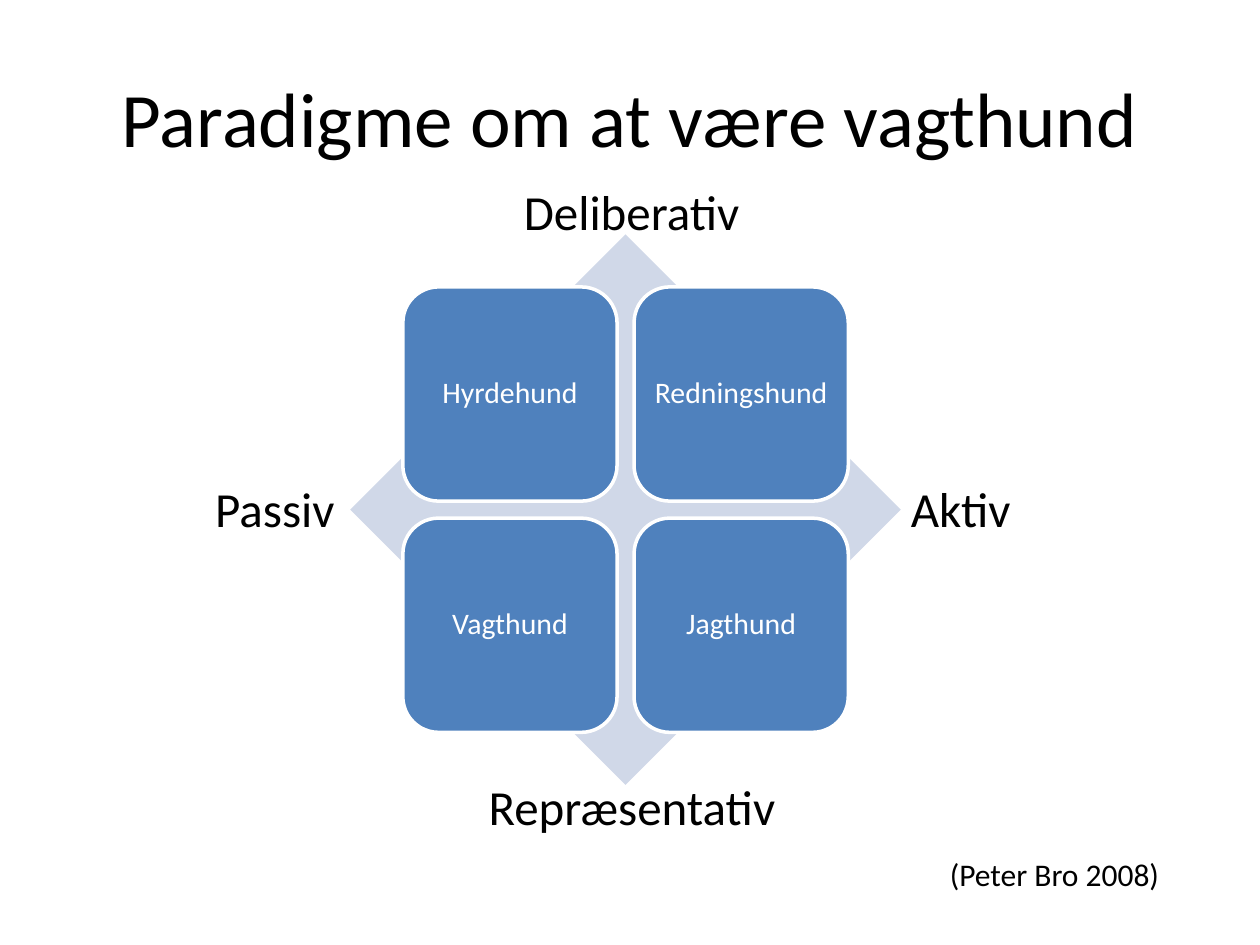
from dataclasses import dataclass

from pptx import Presentation
from pptx.dml.color import RGBColor
from pptx.enum.shapes import MSO_SHAPE
from pptx.enum.text import MSO_ANCHOR, PP_ALIGN
from pptx.util import Inches, Pt

DIAMOND, ROUNDED = MSO_SHAPE.DIAMOND, MSO_SHAPE.ROUNDED_RECTANGLE
LEFT, CENTER = PP_ALIGN.LEFT, PP_ALIGN.CENTER
TOP, MIDDLE = MSO_ANCHOR.TOP, MSO_ANCHOR.MIDDLE


@dataclass(frozen=True)
class Theme:
    font: str = "Calibri"
    ink: str = "000000"
    white: str = "FFFFFF"
    tile: str = "4F81BD"
    backdrop: str = "D0D8E8"
    title_size: int = 44
    axis_size: int = 28
    source_size: int = 18
    tile_size: int = 17


THEME = Theme()

# Matrix geometry in inches: everything is centred on one point
SLIDE_W, SLIDE_H = 10, 7.5
CENTER_X, CENTER_Y = 4.965, 4.045
DIAMOND_SIZE = 4.37
TILE_SIZE, TILE_PITCH = 1.7, 1.835
LABEL_H = 0.57

TILES = [["Hyrdehund", "Redningshund"], ["Vagthund", "Jagthund"]]
AXIS_LABELS = [  # text, left, top, width
    ("Deliberativ", 4.06, 1.39, 1.97),
    ("Repræsentativ", 3.78, 6.11, 2.64),
    ("Passiv", 1.61, 3.75, 1.18),
    ("Aktiv", 7.13, 3.75, 1.18),
]


def write(tf, text, *, size, color=THEME.ink, align=LEFT, anchor=TOP,
          inset=None, spacing=None):
    """Put one formatted paragraph into a text frame."""
    tf.word_wrap = True
    tf.vertical_anchor = anchor
    if inset is not None:
        tf.margin_left = tf.margin_right = Inches(inset)
        tf.margin_top = tf.margin_bottom = Inches(inset)
    p = tf.paragraphs[0]
    p.alignment = align
    p.line_spacing = spacing
    r = p.add_run()
    r.text = text
    r.font.name = THEME.font
    r.font.size = Pt(size)
    r.font.color.rgb = RGBColor.from_string(color)


def add_title(s, text):
    title = s.shapes.title
    title.left, title.top = Inches(0.05 * SLIDE_W), Inches(0.04 * SLIDE_H)
    title.width, title.height = Inches(0.9 * SLIDE_W), Inches(1.25)
    write(title.text_frame, text, size=THEME.title_size, align=CENTER,
          anchor=MIDDLE)


def add_label(s, text, x, y, w, h, size):
    box = s.shapes.add_textbox(Inches(x), Inches(y), Inches(w), Inches(h))
    write(box.text_frame, text, size=size)


def add_centered_square(s, kind, cx, cy, size, fill, line=None):
    """Add a filled square-proportioned shape around a centre point."""
    sp = s.shapes.add_shape(kind, Inches(cx - size / 2), Inches(cy - size / 2),
                            Inches(size), Inches(size))
    sp.shadow.inherit = False
    sp.fill.solid()
    sp.fill.fore_color.rgb = RGBColor.from_string(fill)
    if line:
        sp.line.color.rgb = RGBColor.from_string(line)
        sp.line.width = Pt(2)
    else:
        sp.line.fill.background()
    return sp


def add_matrix(s):
    add_centered_square(s, DIAMOND, CENTER_X, CENTER_Y, DIAMOND_SIZE,
                        THEME.backdrop)
    for row, names in enumerate(TILES):
        for col, name in enumerate(names):
            sp = add_centered_square(
                s, ROUNDED, CENTER_X + (col - 0.5) * TILE_PITCH,
                CENTER_Y + (row - 0.5) * TILE_PITCH, TILE_SIZE,
                THEME.tile, THEME.white)
            write(sp.text_frame, name, size=THEME.tile_size, color=THEME.white,
                  align=CENTER, anchor=MIDDLE, inset=0.07, spacing=0.9)


def main():
    prs = Presentation()
    prs.slide_width, prs.slide_height = Inches(SLIDE_W), Inches(SLIDE_H)
    s = prs.slides.add_slide(prs.slide_layouts[5])

    add_title(s, "Paradigme om at være vagthund")
    add_matrix(s)

    # Ends of the two axes
    for text, x, y, w in AXIS_LABELS:
        add_label(s, text, x, y, w, LABEL_H, THEME.axis_size)

    # Source reference
    add_label(s, "(Peter Bro 2008)", 7.44, 6.74, 2.44, 0.4, THEME.source_size)

    prs.save("out.pptx")


if __name__ == "__main__":
    main()
